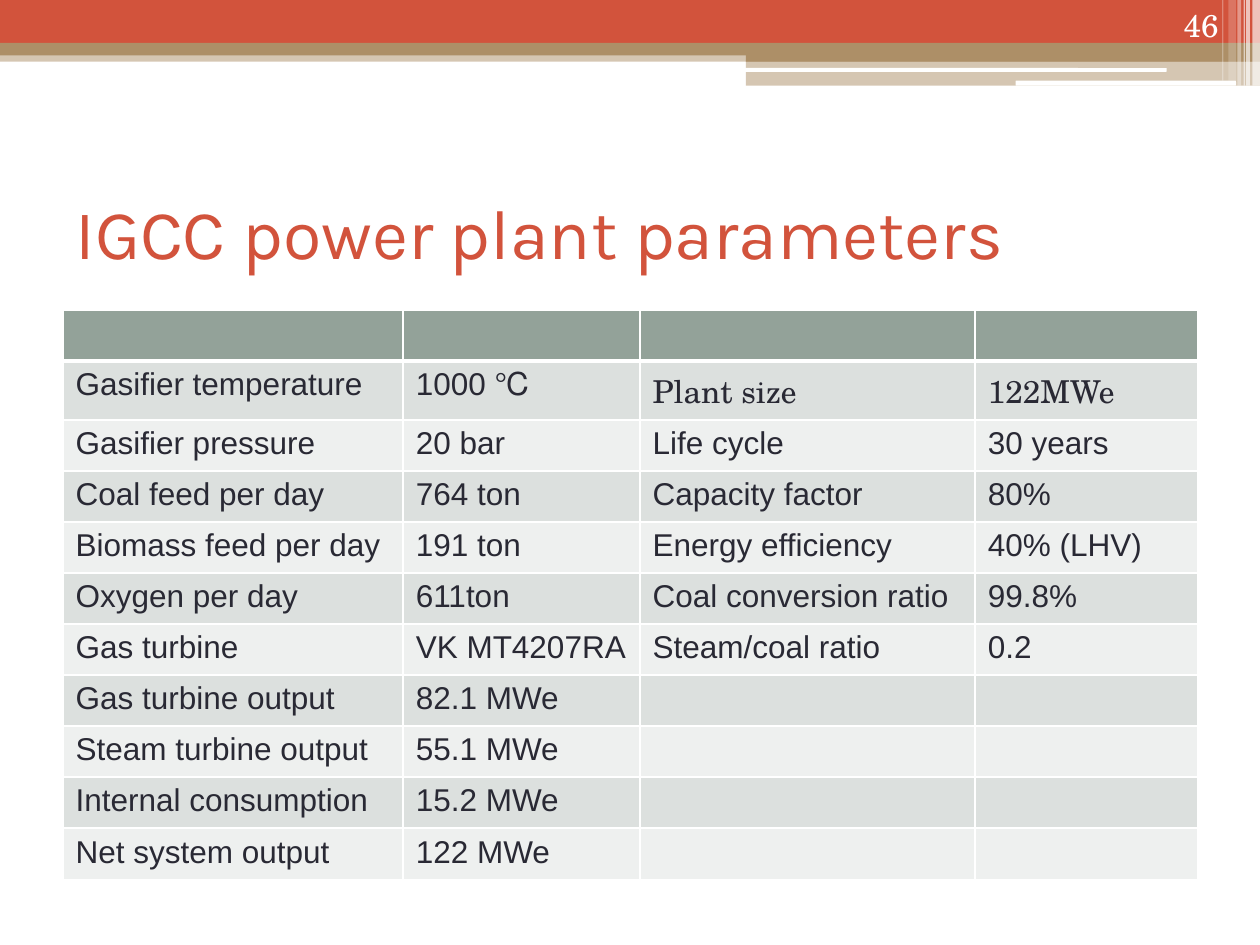
from lxml import etree
from pptx import Presentation
from pptx.dml.color import RGBColor
from pptx.enum.shapes import MSO_SHAPE
from pptx.enum.text import MSO_ANCHOR, MSO_AUTO_SIZE, PP_ALIGN
from pptx.oxml.ns import qn
from pptx.util import Inches, Pt

RECTANGLE = MSO_SHAPE.RECTANGLE
ROUNDED = MSO_SHAPE.ROUNDED_RECTANGLE
MIDDLE, BOTTOM = MSO_ANCHOR.MIDDLE, MSO_ANCHOR.BOTTOM
LEFT, RIGHT = PP_ALIGN.LEFT, PP_ALIGN.RIGHT
NO_AUTOFIT = MSO_AUTO_SIZE.NONE

GRID_UNIT = Inches(0.01)
GRID_COLUMNS, GRID_ROWS = 1000, 750

RED = RGBColor(0xD2, 0x53, 0x3C)
TAN = RGBColor(0xAD, 0x8F, 0x67)
WHITE = RGBColor(0xFF, 0xFF, 0xFF)
INK = RGBColor(0x29, 0x29, 0x34)
HEADER_GREEN = RGBColor(0x93, 0xA2, 0x99)
ROW_FILLS = [RGBColor(0xDC, 0xE0, 0xDE), RGBColor(0xEE, 0xF0, 0xEF)]

SANS, SERIF, DISPLAY = "Arial", "TeX Gyre Schola", "Karla"

BANDS = [
    (RECTANGLE, (0, 40, 1000, 9), TAN, 50),
    (RECTANGLE, (0, 0, 1000, 34), RED, 100),
    (RECTANGLE, (0, 34, 1000, 10), TAN, 100),
    (RECTANGLE, (592, 39, 408, 10), TAN, 100),
    (RECTANGLE, (592, 48, 408, 20), TAN, 50),
    (ROUNDED, (591, 54, 335, 3), WHITE, 100),
    (ROUNDED, (806, 64, 175, 4), WHITE, 100),
]
STRIPES = [
    (994, 6, 68, 65),
    (989, 3, 68, 65),
    (987, 1, 68, 60),
    (982, 3, 68, 40),
    (975, 6, 64, 20),
    (970, 1, 64, 30),
]

COLUMN_WIDTHS = [270, 188, 266, 177]
ROW_HEIGHT = 40.5
PARAMETERS = [
    ("Gasifier temperature", "1000 ℃", "Plant size", "122MWe"),
    ("Gasifier pressure", "20 bar", "Life cycle", "30 years"),
    ("Coal feed per day", "764 ton", "Capacity factor", "80%"),
    ("Biomass feed per day", "191 ton", "Energy efficiency", "40% (LHV)"),
    ("Oxygen per day", "611ton", "Coal conversion ratio", "99.8%"),
    ("Gas turbine", "VK MT4207RA", "Steam/coal ratio", "0.2"),
    ("Gas turbine output", "82.1 MWe", "", ""),
    ("Steam turbine output", "55.1 MWe", "", ""),
    ("Internal consumption", "15.2 MWe", "", ""),
    ("Net system output", "122 MWe", "", ""),
]
SERIF_CELLS = {"Plant size", "122MWe"}


def grid(*cells):
    return [int(cell * GRID_UNIT) for cell in cells]


def set_attributes(target, values):
    for name, value in values.items():
        setattr(target, name, value)


def write_text(frame, text, font_name, size, color, alignment=LEFT):
    paragraph = frame.paragraphs[0]
    paragraph.alignment = alignment
    run = paragraph.add_run()
    run.text = text
    set_attributes(run.font, {"name": font_name, "size": Pt(size), "bold": False})
    run.font.color.rgb = color


def add_band(slide, kind, area, color, opacity):
    shape = slide.shapes.add_shape(kind, *grid(*area))
    shape.shadow.inherit = False
    shape.line.fill.background()
    shape.fill.solid()
    shape.fill.fore_color.rgb = color
    if opacity < 100:
        color_element = shape.element.spPr.find(f"{qn('a:solidFill')}/{qn('a:srgbClr')}")
        etree.SubElement(color_element, qn("a:alpha"), val=str(opacity * 1000))


def add_title(slide, text):
    title = slide.shapes.title
    names = ("left", "top", "width", "height")
    set_attributes(title, dict(zip(names, grid(50, 125, 900, 117))))
    set_attributes(title.text_frame, {
        "word_wrap": True, "auto_size": NO_AUTOFIT, "vertical_anchor": MIDDLE})
    write_text(title.text_frame, text, DISPLAY, 40, RED)


def add_page_number(slide, text):
    box = slide.shapes.add_textbox(*grid(894, 0, 83, 40))
    set_attributes(box.text_frame, {"word_wrap": True, "vertical_anchor": BOTTOM})
    write_text(box.text_frame, text, SERIF, 18, WHITE, RIGHT)


def set_borders(cell, widths):
    properties = cell._tc.get_or_add_tcPr()
    for side, width in widths.items():
        line = etree.SubElement(properties, qn(f"a:ln{side}"), w=str(Pt(width)))
        fill = etree.SubElement(line, qn("a:solidFill"))
        etree.SubElement(fill, qn("a:srgbClr"), val=str(WHITE))


def format_cell(cell, row_index, text):
    set_borders(cell, {
        "L": 1, "R": 1,
        "T": 3 if row_index == 1 else 1,
        "B": 3 if row_index == 0 else 1,
    })
    cell.fill.solid()
    cell.fill.fore_color.rgb = ROW_FILLS[(row_index - 1) % 2] if row_index else HEADER_GREEN
    if text:
        font_name = SERIF if text in SERIF_CELLS else SANS
        write_text(cell.text_frame, text, font_name, 18, INK)


def add_parameter_table(slide):
    rows = [("",) * len(COLUMN_WIDTHS)] + PARAMETERS
    area = grid(50, 246, sum(COLUMN_WIDTHS), ROW_HEIGHT * len(rows))
    table = slide.shapes.add_table(len(rows), len(COLUMN_WIDTHS), *area).table
    table.horz_banding = False
    for column, width in zip(table.columns, grid(*COLUMN_WIDTHS)):
        column.width = width
    for row_index, texts in enumerate(rows):
        table.rows[row_index].height = int(ROW_HEIGHT * GRID_UNIT)
        for column_index, text in enumerate(texts):
            format_cell(table.cell(row_index, column_index), row_index, text)


def main():
    presentation = Presentation()
    presentation.slide_width, presentation.slide_height = grid(GRID_COLUMNS, GRID_ROWS)
    slide = presentation.slides.add_slide(presentation.slide_layouts.get_by_name("Title Only"))
    for kind, area, color, opacity in BANDS:
        add_band(slide, kind, area, color, opacity)
    for left, width, height, opacity in STRIPES:
        add_band(slide, RECTANGLE, (left, 0, width, height), WHITE, opacity)
    add_title(slide, "IGCC power plant parameters")
    add_parameter_table(slide)
    add_page_number(slide, "46")
    presentation.save("out.pptx")


if __name__ == "__main__":
    main()
